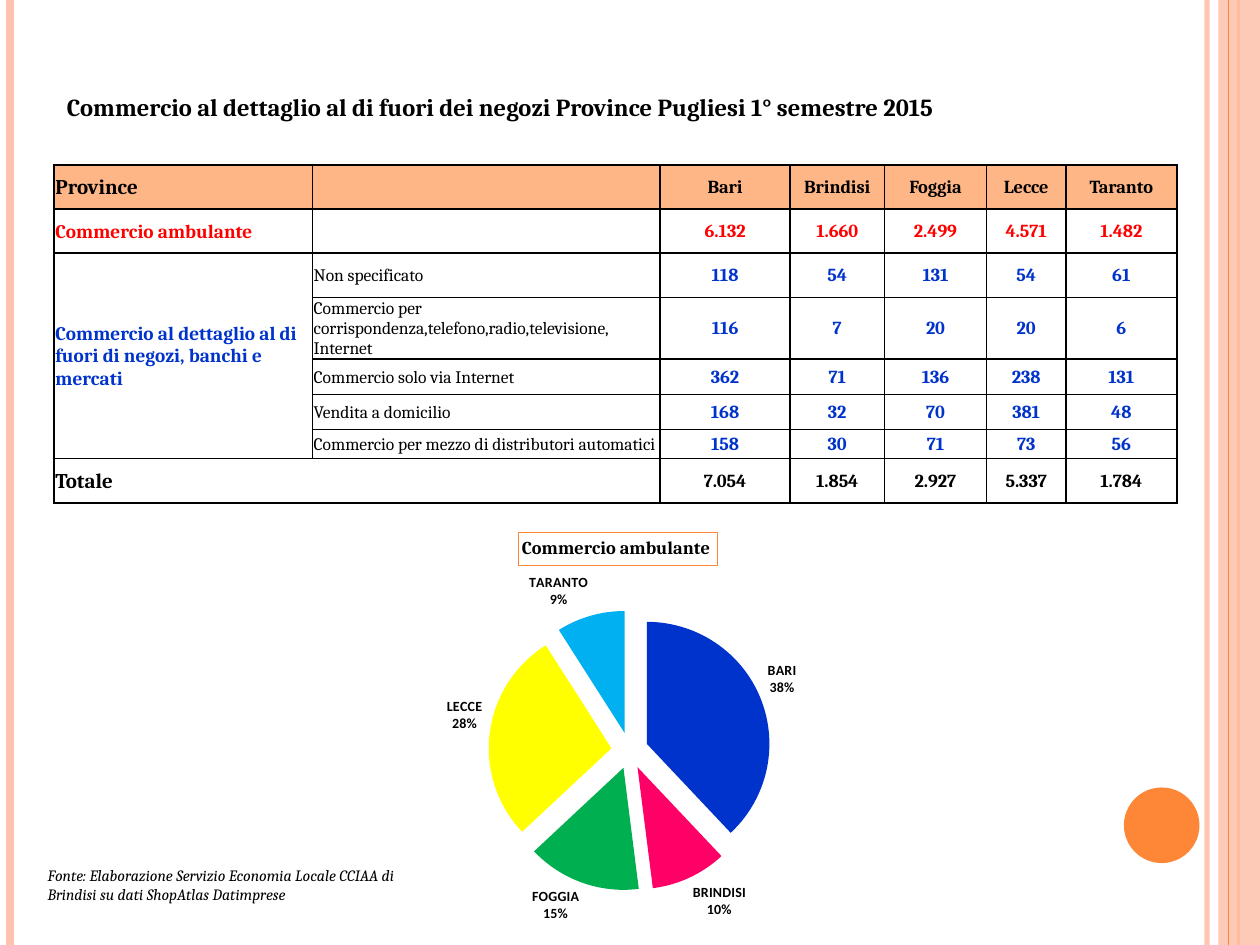
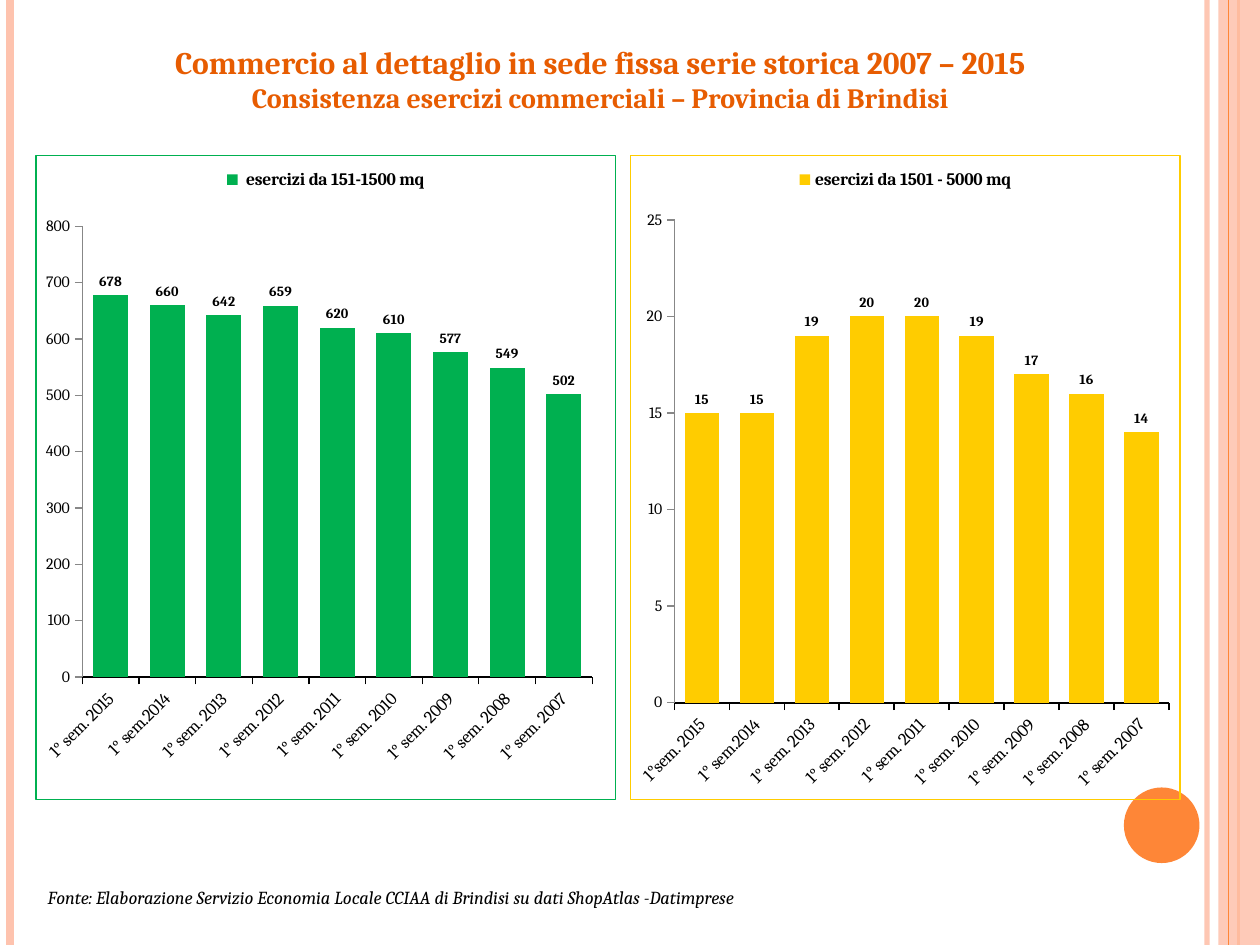
from dataclasses import dataclass

from pptx import Presentation
from pptx.chart.data import CategoryChartData
from pptx.dml.color import RGBColor
from pptx.enum.chart import XL_CHART_TYPE as ChartType
from pptx.enum.chart import XL_LABEL_POSITION as LabelPos
from pptx.enum.chart import XL_LEGEND_POSITION as LegendPos
from pptx.enum.chart import XL_TICK_MARK as Tick
from pptx.enum.shapes import MSO_CONNECTOR as Connector
from pptx.enum.shapes import MSO_SHAPE as Shape
from pptx.enum.text import MSO_ANCHOR as Anchor
from pptx.enum.text import MSO_AUTO_SIZE as AutoSize
from pptx.enum.text import PP_ALIGN as Align
from pptx.oxml import parse_xml
from pptx.oxml.ns import nsdecls, qn
from pptx.oxml.xmlchemy import OxmlElement
from pptx.util import Inches, Pt

BLACK = RGBColor(0x00, 0x00, 0x00)
RED = RGBColor(0xFF, 0x00, 0x00)
BLUE = RGBColor(0x00, 0x33, 0xCC)
PINK = RGBColor(0xFF, 0x00, 0x66)
GREEN = RGBColor(0x00, 0xB0, 0x50)
YELLOW = RGBColor(0xFF, 0xFF, 0x00)
SKY = RGBColor(0x00, 0xB0, 0xF0)
GOLD = RGBColor(0xFF, 0xCC, 0x00)
ORANGE = RGBColor(0xFE, 0x86, 0x37)
DARK_ORANGE = RGBColor(0xE7, 0x5C, 0x01)
PEACH = RGBColor(0xFE, 0xC3, 0xAE)
HEADER_FILL = RGBColor(0xFE, 0xB6, 0x87)

HEAD_FONT, LABEL_FONT = "Cambria", "Calibri"
UNIT = Inches(0.1)  # the slide is a grid of 100 columns by 75 rows


@dataclass
class Box:
    """A region measured in grid columns and rows."""
    col: float
    row: float
    cols: float
    rows: float

    def emu(self):
        return [round(n * UNIT) for n in (self.col, self.row, self.cols, self.rows)]

    def inner(self, col, row, cols, rows):
        return Box(self.col + col, self.row + row, cols, rows)


SLIDE = Box(0, 0, 100, 75)


# ---- Shared helpers ----
def style_font(font, size, color=BLACK, bold=False, italic=False, name=HEAD_FONT):
    font.name, font.size, font.bold, font.italic = name, Pt(size), bold, italic
    font.color.rgb = color


def write(frame, text, align=Align.LEFT, sizes=(), **fmt):
    """Fill a frame; each newline is a line break, sizes overrides size by line."""
    paragraph = frame.paragraphs[0]
    paragraph.alignment = align
    for index, line in enumerate(text.split("\n")):
        if index:
            paragraph.add_line_break()
        run = paragraph.add_run()
        run.text = line
        style_font(run.font, **({**fmt, "size": sizes[index]} if sizes else fmt))


def set_alpha(fill_owner, percent):
    for color in fill_owner.element.spPr.iter(qn("a:srgbClr")):
        alpha = OxmlElement("a:alpha")
        alpha.set("val", str(percent * 1000))
        color.append(alpha)


def set_layout(parent, index, inner=False, **shares):
    """Place a chart title or plot area by shares of the chart's size."""
    for old in parent.findall(qn("c:layout")):
        parent.remove(old)
    target = '<c:layoutTarget val="inner"/>' if inner else ""
    modes = "".join(f'<c:{k}Mode val="edge"/>' for k in "xy")
    values = "".join(f'<c:{k} val="{v}"/>' for k, v in shares.items())
    parent.insert(index, parse_xml(
        f'<c:layout {nsdecls("c")}><c:manualLayout>{target}{modes}{values}'
        "</c:manualLayout></c:layout>"))


# ---- Bands and disc shared by all slides ----
def add_decoration(slide, layout, box):
    def rule(col, color, width, alpha=100):
        x, top, _, height = box.inner(col, 0, 0, box.rows).emu()
        line = slide.shapes.add_connector(Connector.STRAIGHT, x, top, x, top + height)
        line.line.color.rgb, line.line.width = color, Pt(width)
        line.element.spPr.append(OxmlElement("a:effectLst"))
        if alpha < 100:
            set_alpha(line, alpha)
        return line

    def solid(kind, place, color):
        shape = slide.shapes.add_shape(kind, *place.emu())
        shape.shadow.inherit = False
        shape.fill.solid()
        shape.fill.fore_color.rgb = color
        shape.line.fill.background()
        return shape

    ornaments = [rule(95.8, PEACH, 3, 93), rule(0.8, PEACH, 4.5), rule(98.3, ORANGE, 1.5)]
    band = solid(Shape.RECTANGLE, box.inner(96.7, 0, 3.3, box.rows), PEACH)
    set_alpha(band, 87)
    ornaments += [band, rule(97.5, ORANGE, 0.75),
                  solid(Shape.OVAL, box.inner(89.2, 62.5, 6, 6), ORANGE)]
    # Moved to the layout, so that every slide shows them
    for ornament in ornaments:
        layout.shapes.element.append(ornament.element)


def add_title(slide, box, text, **fmt):
    title = slide.shapes.title
    title.left, title.top, title.width, title.height = box.emu()
    title.text_frame.auto_size = AutoSize.NONE
    title.text_frame.vertical_anchor = Anchor.MIDDLE
    write(title.text_frame, text, bold=True, **fmt)


def add_source(slide, box, text, size):
    frame = slide.shapes.add_textbox(*box.emu()).text_frame
    frame.word_wrap = True
    write(frame, text, size=size, italic=True)


# ---- Table of the provinces ----
COLUMN_COLS = (20.5, 27.6, 10.3, 7.5, 8.1, 6.3, 8.8)
ROW_ROWS = (3.5, 3.5, 3.5, 3.4, 2.8, 2.8, 2.3, 3.5)
OUTSIDE_SHOPS = "Commercio al dettaglio al di fuori di negozi, banchi e mercati"
# heading, its size, detail, figures, colour
PROVINCE_ROWS = (
    ("Province", 12, "", "Bari Brindisi Foggia Lecce Taranto", BLACK),
    ("Commercio ambulante", 11, "", "6.132 1.660 2.499 4.571 1.482", RED),
    (OUTSIDE_SHOPS, 11, "Non specificato", "118 54 131 54 61", BLUE),
    ("", 11, "Commercio per corrispondenza,telefono,radio,televisione,\nInternet",
     "116 7 20 20 6", BLUE),
    ("", 11, "Commercio solo via Internet", "362 71 136 238 131", BLUE),
    ("", 11, "Vendita a domicilio", "168 32 70 381 48", BLUE),
    ("", 11, "Commercio per mezzo di distributori automatici", "158 30 71 73 56", BLUE),
    ("Totale", 12, "", "7.054 1.854 2.927 5.337 1.784", BLACK),
)


def format_cell(cell, header):
    cell.vertical_anchor = Anchor.MIDDLE
    cell.margin_left = cell.margin_right = cell.margin_top = Inches(0.01)
    cell.margin_bottom = 0
    props = cell._tc.get_or_add_tcPr()
    for side in ("lnL", "lnR", "lnT", "lnB"):
        props.append(parse_xml(
            f'<a:{side} {nsdecls("a")} w="{Pt(1)}"><a:solidFill>'
            f'<a:srgbClr val="{BLACK}"/></a:solidFill></a:{side}>'))
    if header:
        cell.fill.solid()
        cell.fill.fore_color.rgb = HEADER_FILL
    else:
        cell.fill.background()


def add_province_table(slide, box):
    table = slide.shapes.add_table(len(ROW_ROWS), len(COLUMN_COLS), *box.emu()).table
    table.first_row = table.horz_banding = False
    for column, cols in zip(table.columns, COLUMN_COLS):
        column.width = round(cols * UNIT)
    for row, rows in zip(table.rows, ROW_ROWS):
        row.height = round(rows * UNIT)
    for r, (heading, size, detail, figures, color) in enumerate(PROVINCE_ROWS):
        for c, text in enumerate([heading, detail, *figures.split()]):
            cell = table.cell(r, c)
            format_cell(cell, header=r == 0)
            if not text:
                continue
            if c == 0:
                write(cell.text_frame, text, size=size, color=color, bold=True)
            elif c == 1:
                write(cell.text_frame, text, size=10)
            else:
                write(cell.text_frame, text, Align.CENTER, size=10.5, color=color, bold=True)
    table.cell(2, 0).merge(table.cell(6, 0))
    table.cell(7, 0).merge(table.cell(7, 1))


# ---- Charts ----
def add_chart(slide, box, kind, series_name, categories, values):
    data = CategoryChartData(number_format="#,##0")
    data.categories = categories
    data.add_series(series_name, values)
    chart = slide.shapes.add_chart(kind, *box.emu(), data).chart
    style_font(chart.font, 10)
    return chart


def add_share_pie(slide, box):
    shares = {"BARI": (38, BLUE), "BRINDISI": (10, PINK), "FOGGIA": (15, GREEN),
              "LECCE": (28, YELLOW), "TARANTO": (9, SKY)}
    chart = add_chart(slide, box, ChartType.PIE, "Series 1", list(shares),
                      [value for value, _ in shares.values()])
    chart.has_legend = False
    # Framed title
    chart.has_title = True
    title = chart.chart_title
    write(title.text_frame, "Commercio ambulante ", Align.CENTER, size=10.5, bold=True)
    title.format.line.color.rgb, title.format.line.width = ORANGE, Pt(0.75)
    set_layout(chart.element.xpath(".//c:chart/c:title")[0], 1, x=0.3, y=0)
    set_layout(chart.element.xpath(".//c:plotArea")[0], 0, inner=True,
               x=0.08, y=0.2, w=0.82, h=0.72)
    # Slices, pulled apart
    slices = chart.plots[0].series[0]
    for index, (_, color) in enumerate(shares.values()):
        fill = slices.points[index].format.fill
        fill.solid()
        fill.fore_color.rgb = color
    explosion = OxmlElement("c:explosion")
    explosion.set("val", "15")
    chart.element.xpath(".//c:ser/c:dPt")[0].addprevious(explosion)
    # Labels of name and share on two lines
    labels = slices.data_labels
    labels.show_category_name = labels.show_percentage = True
    labels.show_value = labels.show_legend_key = False
    labels.number_format, labels.number_format_is_linked = "0%", False
    labels.position = LabelPos.OUTSIDE_END
    style_font(labels.font, 8, bold=True, name=LABEL_FONT)
    separator = OxmlElement("c:separator")
    separator.text = "\n"
    last_flag = chart.element.xpath(".//c:ser/c:dLbls/*[starts-with(name(), 'c:show')]"
                                    "[not(self::c:showLeaderLines)]")[-1]
    last_flag.addnext(separator)


def add_history_chart(slide, box, name, first, values, color, gap, top, step, line, plot):
    semesters = [first, "1° sem.2014"] + [f"1° sem. {y}" for y in range(2013, 2006, -1)]
    chart = add_chart(slide, box, ChartType.COLUMN_CLUSTERED, name, semesters, values)
    chart.has_title = False
    chart.has_legend = True
    chart.legend.position, chart.legend.include_in_layout = LegendPos.TOP, False
    style_font(chart.legend.font, 10, bold=True)
    set_layout(chart.element.xpath(".//c:plotArea")[0], 0, inner=True, **plot)
    # Coloured frame
    chart.element.find(qn("c:chart")).addnext(parse_xml(
        f'<c:spPr {nsdecls("c", "a")}><a:noFill/><a:ln w="{Pt(0.75)}"><a:solidFill>'
        f'<a:srgbClr val="{color}"/></a:solidFill></a:ln></c:spPr>'))
    # Columns and their labels
    columns = chart.plots[0]
    columns.gap_width, columns.vary_by_categories = gap, False
    bars = columns.series[0]
    bars.invert_if_negative = False
    bars.format.fill.solid()
    bars.format.fill.fore_color.rgb = color
    labels = bars.data_labels
    labels.show_value = True
    labels.number_format, labels.number_format_is_linked = "#,##0", False
    labels.position = LabelPos.OUTSIDE_END
    style_font(labels.font, 8, bold=True)
    # Axes
    for axis, size in ((chart.category_axis, 10), (chart.value_axis, 9)):
        axis.has_major_gridlines = False
        axis.major_tick_mark, axis.minor_tick_mark = Tick.OUTSIDE, Tick.NONE
        style_font(axis.tick_labels.font, size)
    chart.value_axis.minimum_scale, chart.value_axis.maximum_scale = 0, top
    chart.value_axis.major_unit = step
    base = chart.category_axis.format.line
    base.color.rgb, base.width = BLACK, Pt(line)
    chart.element.xpath(".//c:catAx/c:txPr/a:bodyPr")[0].set("rot", str(-45 * 60000))


# ---- Slides ----
def fill_province_slide(slide, box):
    add_title(slide, box.inner(4.3, 6.8, 87.4, 3.4),
              "Commercio al dettaglio al di fuori dei negozi Province Pugliesi 1° semestre 2015",
              size=14)
    add_province_table(slide, box.inner(4.3, 13.1, 89.1, 28.2))
    add_share_pie(slide, box.inner(27.2, 42.2, 46.5, 31.1))
    add_source(slide, box.inner(2.8, 68.2, 30.7, 4),
               "Fonte: Elaborazione Servizio Economia Locale CCIAA di Brindisi "
               "su dati ShopAtlas Datimprese", 9)


def fill_history_slide(slide, box):
    add_title(slide, box.inner(2, 2.9, 91.3, 6.7),
              "Commercio al dettaglio in sede fissa serie storica 2007 – 2015\n"
              "Consistenza esercizi commerciali – Provincia di Brindisi",
              align=Align.CENTER, sizes=(18, 16), color=DARK_ORANGE)
    add_history_chart(slide, box.inner(2.8, 12.3, 46.1, 51.2), " esercizi da 151-1500 mq",
                      "1° sem. 2015", (678, 660, 642, 659, 620, 610, 577, 549, 502),
                      GREEN, gap=62, top=800, step=100, line=0.75,
                      plot=dict(x=0.08, y=0.11, w=0.88, h=0.7))
    add_history_chart(slide, box.inner(50, 12.3, 43.7, 51.2), "esercizi da 1501 - 5000 mq",
                      "1°sem. 2015", (15, 15, 19, 20, 20, 19, 17, 16, 14),
                      GOLD, gap=60, top=25, step=5, line=1,
                      plot=dict(x=0.08, y=0.1, w=0.9, h=0.75))
    add_source(slide, box.inner(2.8, 69.8, 81.9, 2.9),
               "Fonte: Elaborazione Servizio Economia Locale CCIAA di Brindisi "
               "su dati ShopAtlas -Datimprese", 10.5)


def main():
    deck = Presentation()
    deck.slide_width, deck.slide_height = SLIDE.emu()[2:]
    layout = deck.slide_layouts[5]  # title only
    for extra in list(layout.placeholders)[1:]:
        layout.shapes.element.remove(extra.element)
    provinces, history = (deck.slides.add_slide(layout) for _ in range(2))
    add_decoration(provinces, layout, SLIDE)
    fill_province_slide(provinces, SLIDE)
    fill_history_slide(history, SLIDE)
    deck.save("out.pptx")


if __name__ == "__main__":
    main()
